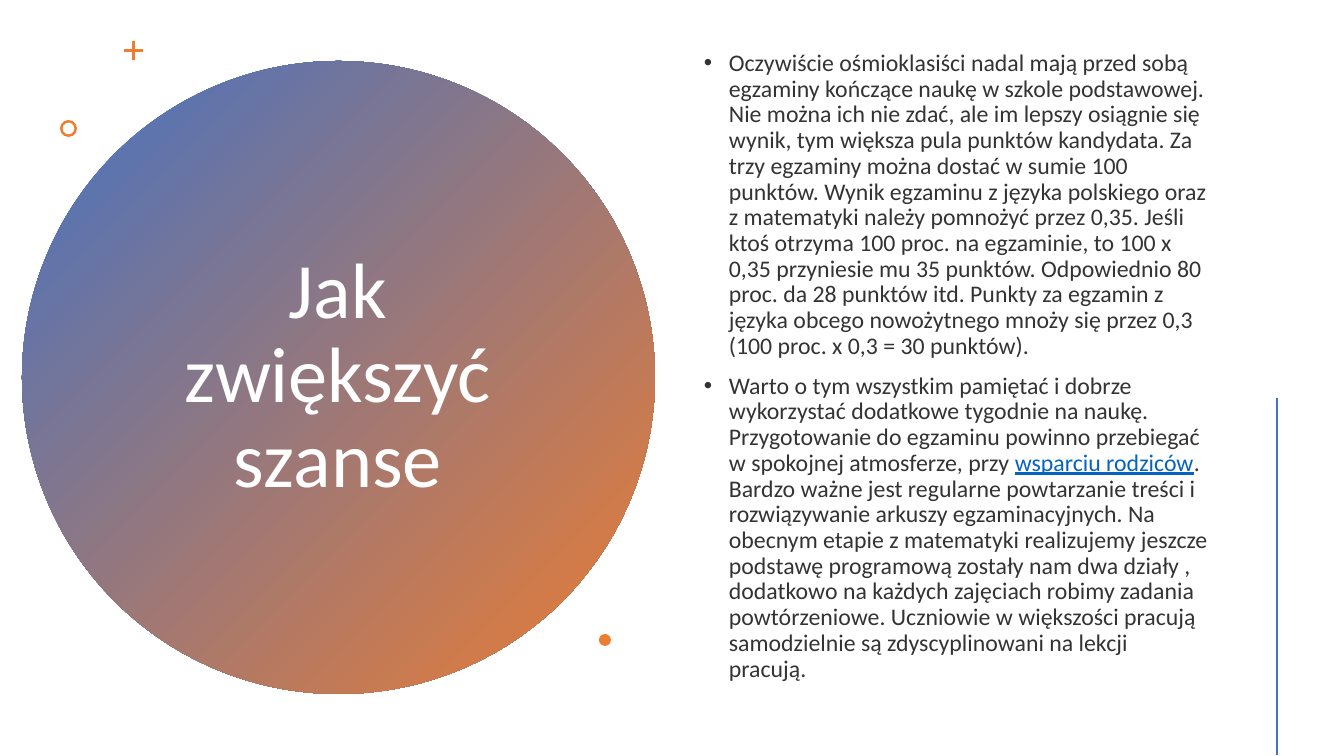
from dataclasses import dataclass

from lxml.etree import SubElement
from pptx import Presentation
from pptx.dml.color import RGBColor
from pptx.enum.shapes import MSO_CONNECTOR, MSO_SHAPE
from pptx.enum.text import MSO_ANCHOR, PP_ALIGN
from pptx.oxml.ns import qn
from pptx.util import Emu, Pt

EMU_PER_PX = 914400 / 100.8
BLUE, ORANGE, WHITE, DARK, LINK = "4472C4", "ED7D31", "FFFFFF", "333333", "0563C1"


@dataclass(frozen=True)
class Span:
    text: str
    color: str = DARK
    size: int = 17
    underline: bool = False


@dataclass(frozen=True)
class Block:
    left: int
    top: int
    width: int
    height: int
    paragraphs: tuple[tuple[Span, ...], ...]
    frame_format: dict
    para_format: dict
    gap: int = 0
    bulleted: bool = False


@dataclass(frozen=True)
class Ornament:
    kind: MSO_SHAPE
    left: int
    top: int
    size: int
    adjustment: float | None = None


TITLE = Block(
    137, 142, 402, 471,
    ((Span("Jak zwiększyć szanse", WHITE, 56),),),
    {"vertical_anchor": MSO_ANCHOR.MIDDLE},
    {"alignment": PP_ALIGN.CENTER, "line_spacing": 0.9},
)
BODY = Block(
    694, 51, 526, 643,
    (
        (Span(
            "Oczywiście ośmioklasiści nadal mają przed sobą egzaminy kończące naukę "
            "w szkole podstawowej. Nie można ich nie zdać, ale im lepszy osiągnie się "
            "wynik, tym większa pula punktów kandydata. Za trzy egzaminy można dostać "
            "w sumie 100 punktów. Wynik egzaminu z języka polskiego oraz z matematyki "
            "należy pomnożyć przez 0,35. Jeśli ktoś otrzyma 100 proc. na egzaminie, to "
            "100 x 0,35 przyniesie mu 35 punktów. Odpowiednio 80 proc. da 28 punktów "
            "itd. Punkty za egzamin z języka obcego nowożytnego mnoży się przez 0,3 "
            "(100 proc. x 0,3 = 30 punktów)."
        ),),
        (
            Span(
                "Warto o tym wszystkim pamiętać i dobrze wykorzystać dodatkowe tygodnie "
                "na naukę. Przygotowanie do egzaminu powinno przebiegać w spokojnej "
                "atmosferze, przy "
            ),
            Span("wsparciu rodziców", LINK, underline=True),
            Span(
                ". Bardzo ważne jest regularne powtarzanie treści i rozwiązywanie "
                "arkuszy egzaminacyjnych. Na obecnym etapie z matematyki realizujemy "
                "jeszcze podstawę programową zostały nam dwa działy , dodatkowo na "
                "każdych zajęciach robimy zadania powtórzeniowe. Uczniowie w większości "
                "pracują samodzielnie są zdyscyplinowani na lekcji pracują."
            ),
        ),
    ),
    {"vertical_anchor": MSO_ANCHOR.TOP, "margin_top": 0, "margin_bottom": 0},
    {"alignment": PP_ALIGN.LEFT, "line_spacing": 0.9},
    gap=10,
    bulleted=True,
)
CIRCLE = Ornament(MSO_SHAPE.OVAL, 22, 61, 633)
ACCENTS = (
    Ornament(MSO_SHAPE.CROSS, 124, 41, 19, 0.43),
    Ornament(MSO_SHAPE.DONUT, 60, 120, 17, 0.15),
    Ornament(MSO_SHAPE.OVAL, 599, 634, 12),
)


def px(length: int) -> Emu:
    return Emu(round(length * EMU_PER_PX))


def rgb(color: str) -> RGBColor:
    return RGBColor.from_string(color)


def apply(target, values: dict) -> None:
    for name, value in values.items():
        setattr(target, name, value)


def add_ornament(page, ornament: Ornament):
    size = px(ornament.size)
    shape = page.shapes.add_shape(
        ornament.kind, px(ornament.left), px(ornament.top), size, size
    )
    shape.shadow.inherit = False
    shape.line.fill.background()
    if ornament.adjustment is not None:
        shape.adjustments[0] = ornament.adjustment
    shape.fill.solid()
    shape.fill.fore_color.rgb = rgb(ORANGE)
    return shape


def add_gradient(shape, colors: tuple[str, str]) -> None:
    shape.fill.gradient()
    shape.fill.gradient_angle = 315
    for stop, color in zip(shape.fill.gradient_stops, colors):
        stop.color.rgb = rgb(color)


def add_bullet(para) -> None:
    properties = para._p.get_or_add_pPr()
    properties.set("marL", str(px(25)))
    properties.set("indent", str(-px(25)))
    SubElement(properties, qn("a:buFont")).set("typeface", "Arial")
    SubElement(properties, qn("a:buChar")).set("char", "•")


def add_block(page, block: Block) -> None:
    box = page.shapes.add_textbox(
        px(block.left), px(block.top), px(block.width), px(block.height)
    )
    frame = box.text_frame
    apply(frame, {"word_wrap": True, **block.frame_format})
    for index, spans in enumerate(block.paragraphs):
        para = frame.add_paragraph() if index else frame.paragraphs[0]
        apply(para, block.para_format)
        if index:
            para.space_before = Pt(block.gap)
        if block.bulleted:
            add_bullet(para)
        for span in spans:
            run = para.add_run()
            run.text = span.text
            apply(run.font, {
                "name": "Calibri", "size": Pt(span.size), "underline": span.underline
            })
            run.font.color.rgb = rgb(span.color)


def add_rule(page, x: int, top: int, bottom: int) -> None:
    rule = page.shapes.add_connector(
        MSO_CONNECTOR.STRAIGHT, px(x), px(top), px(x), px(bottom)
    )
    rule.line.color.rgb = rgb(BLUE)
    rule.line.width = Pt(2)
    SubElement(rule._element.spPr, qn("a:effectLst"))


def main() -> None:
    deck = Presentation()
    apply(deck, {"slide_width": px(1344), "slide_height": px(756)})
    page = deck.slides.add_slide(deck.slide_layouts[6])
    add_gradient(add_ornament(page, CIRCLE), (BLUE, ORANGE))
    for block in (TITLE, BODY):
        add_block(page, block)
    for accent in ACCENTS:
        add_ornament(page, accent)
    add_rule(page, 1277, 398, 755)
    deck.save("out.pptx")


if __name__ == "__main__":
    main()
